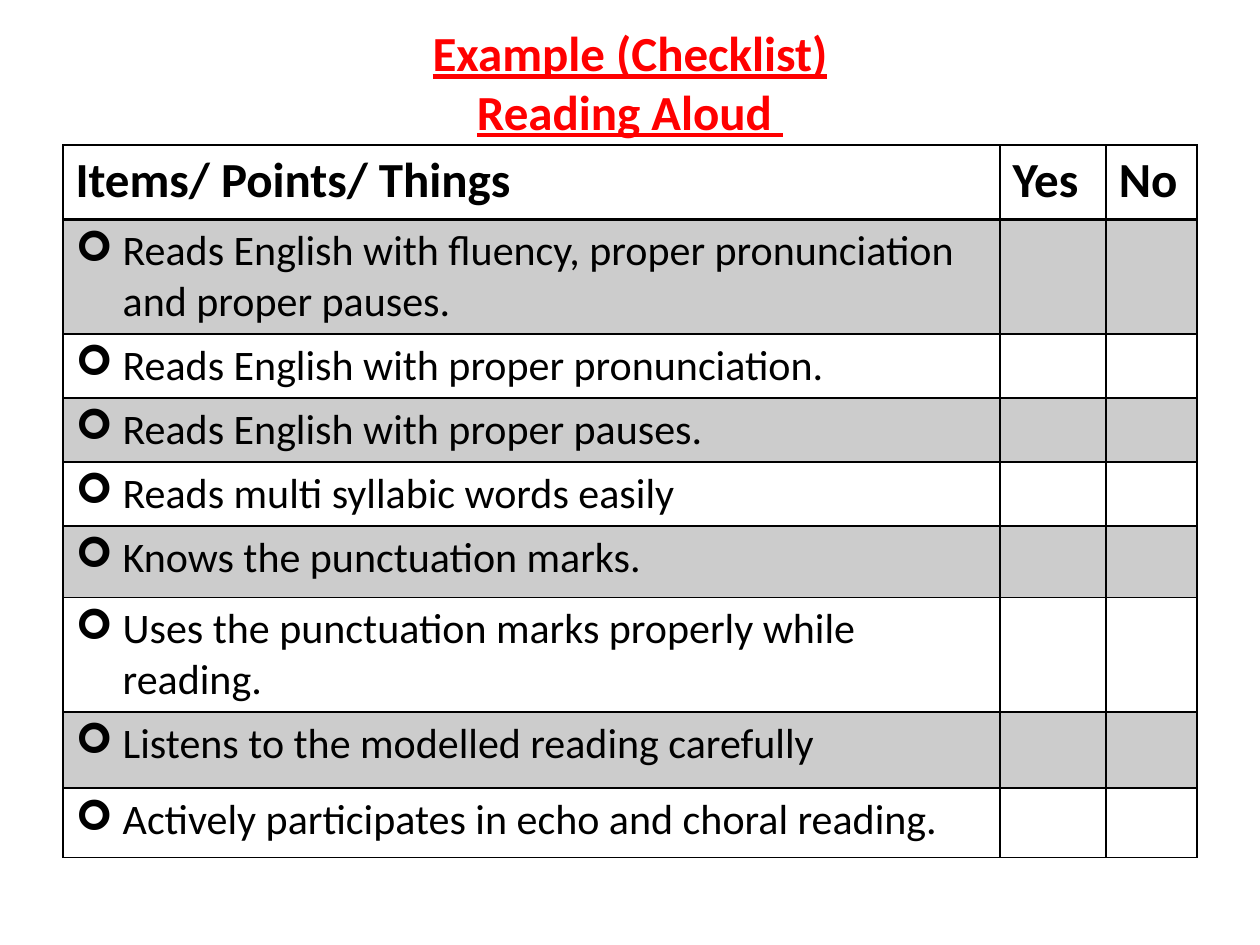
from dataclasses import dataclass
from lxml.etree import SubElement
from pptx import Presentation
from pptx.dml.color import RGBColor as RGB
from pptx.enum.text import MSO_ANCHOR as Anchor, PP_ALIGN as Align
from pptx.oxml.ns import qn
from pptx.util import Cm, Pt


@dataclass
class Theme:
    font: str = "Calibri"
    red: RGB = RGB(255, 0, 0)
    black: RGB = RGB(0, 0, 0)
    big: int = 28
    body: int = 24
    tint: int = 20000


theme = Theme()


def style(para, size, color, bold):
    for run in para.runs:
        font = run.font
        font.name, font.size, font.bold = theme.font, Pt(size), bold
        font.color.rgb = color


def edge(cell, side, width):
    line = SubElement(cell._tc.get_or_add_tcPr(), qn(f"a:ln{side}"), w=str(Pt(width)))
    fill = SubElement(line, qn("a:solidFill"))
    SubElement(fill, qn("a:srgbClr"), val=str(theme.black))


deck = Presentation()
deck.slide_width, deck.slide_height = Cm(25.4), Cm(19.05)
slide = deck.slides.add_slide(deck.slide_layouts[6])

title = slide.shapes.add_textbox(Cm(1.27), Cm(0.76), Cm(22.86), Cm(1.75))
frame = title.text_frame
frame.word_wrap = True
frame.vertical_anchor = Anchor.MIDDLE
frame.text = "Example (Checklist)\vReading Aloud "
para = frame.paragraphs[0]
para.alignment = Align.CENTER
style(para, theme.big, theme.red, True)
for run in para.runs:
    run.font.underline = True

heads = ["Items/ Points/ Things", "Yes", "No"]
items = [
    ("Reads English with fluency, proper pronunciation and proper pauses.", 2.31),
    ("Reads English with proper pronunciation.", 1.29),
    ("Reads English with proper pauses.", 1.29),
    ("Reads multi syllabic words easily", 1.29),
    ("Knows the punctuation marks.", 1.44),
    ("Uses the punctuation marks properly while reading.", 2.31),
    ("Listens to the modelled reading carefully", 1.54),
    ("Actively participates in echo and choral reading.", 1.4),
]
widths = [18.89, 2.14, 1.83]
highs = [1.5] + [high for _, high in items]
rows = [heads] + [[text, "", ""] for text, _ in items]

table = slide.shapes.add_table(
    len(rows), len(heads), Cm(1.27), Cm(2.92), Cm(sum(widths)), Cm(sum(highs))
).table
table.first_row = table.horz_banding = False
for col, width in zip(table.columns, widths):
    col.width = Cm(width)

for r, (texts, high) in enumerate(zip(rows, highs)):
    table.rows[r].height = Cm(high)
    for c, text in enumerate(texts):
        cell = table.cell(r, c)
        for side in "LRTB":
            thick = (r, side) in [(0, "B"), (1, "T")]
            edge(cell, side, 2 if thick else 1)
        if r % 2:
            cell.fill.solid()
            cell.fill.fore_color.rgb = theme.black
            tone = cell._tc.tcPr.find(qn("a:solidFill"))[0]
            SubElement(tone, qn("a:alpha"), val=str(theme.tint))
        else:
            cell.fill.background()
        if not text:
            continue
        cell.text_frame.text = text
        para = cell.text_frame.paragraphs[0]
        style(para, theme.body if r else theme.big, theme.black, r == 0)
        if r:
            props = para._p.get_or_add_pPr()
            props.set("marL", str(Cm(0.95)))
            props.set("indent", str(Cm(-0.95)))
            SubElement(props, qn("a:buFont"), typeface="Wingdings")
            SubElement(props, qn("a:buChar"), char="➢")

deck.save("out.pptx")
